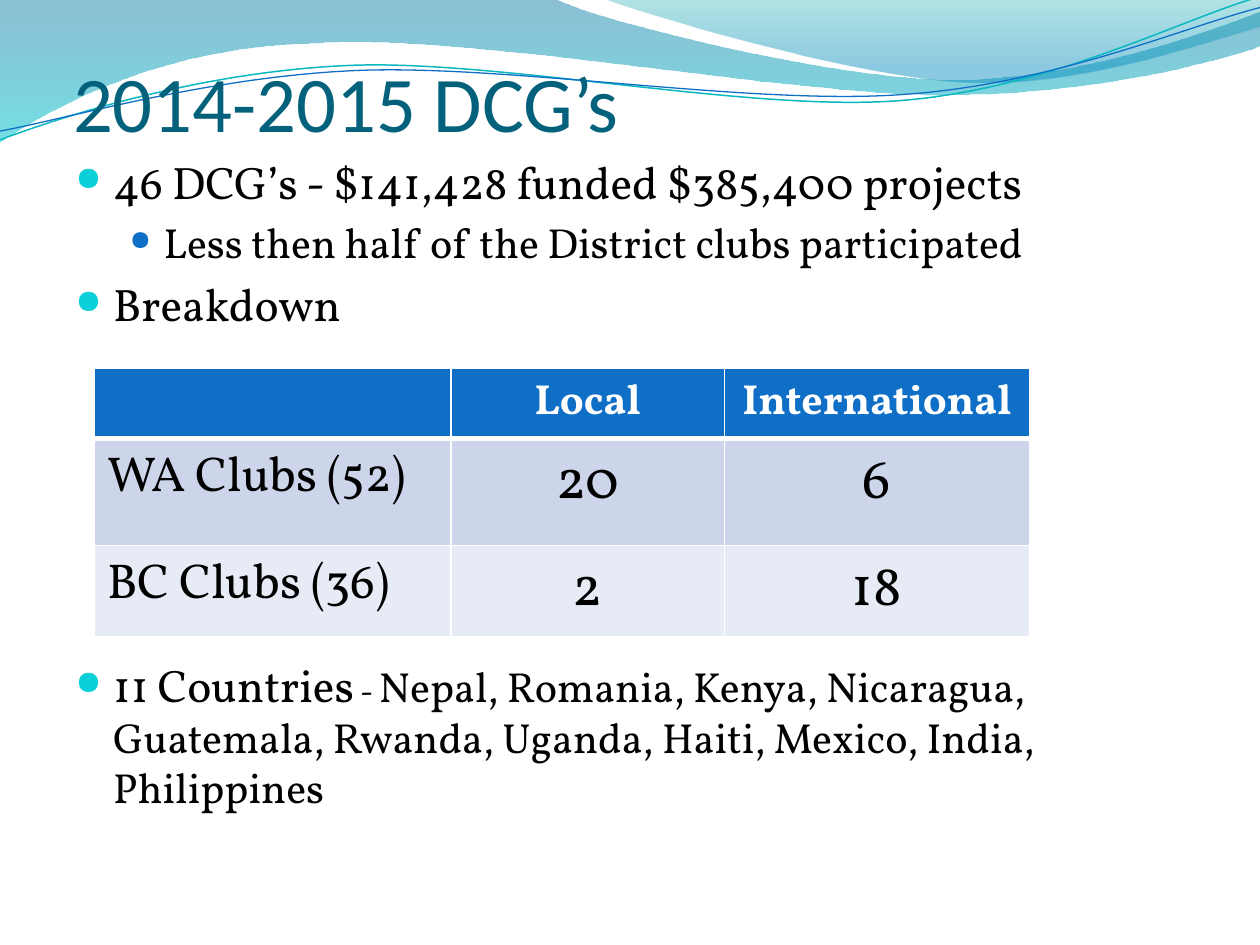
from lxml.etree import SubElement
from pptx import Presentation
from pptx.dml.color import RGBColor
from pptx.enum.text import MSO_ANCHOR, PP_ALIGN
from pptx.oxml.ns import qn
from pptx.util import Inches, Pt

NAVY = RGBColor(0x04, 0x61, 0x7B)
BLUE = RGBColor(0x0F, 0x6F, 0xC6)
CYAN = RGBColor(0x0B, 0xD0, 0xD9)
TEAL = RGBColor(0x0A, 0xB8, 0xBF)
BLACK = RGBColor(0, 0, 0)
WHITE = RGBColor(255, 255, 255)
BANDS = [RGBColor(0xCC, 0xD5, 0xEA), RGBColor(0xE7, 0xEB, 0xF5)]
TITLE_FONT, BODY_FONT = "Calibri", "Vollkorn"
UNITS = 1000  # outline units per inch

TITLE = "2014-2015 DCG’s"

# Bullet styles by level: left margin, hanging indent, colour, size %
LEVELS = [(0.3, -0.3, CYAN, 73), (0.7, -0.27, BLUE, 65)]
# Level, space before (pt), runs; the last paragraph clears the table
BODY = [
    (0, 5.2, [("46 DCG’s - $141,428 funded $385,400 projects", 26)]),
    (1, 4.8, [("Less then half of the District clubs participated", 24)]),
    (0, 5.2, [("Breakdown", 26)]),
    (0, 186.5, [("11 Countries", 26), (" - ", 18),
                ("Nepal, Romania, Kenya, Nicaragua, Guatemala, Rwanda, Uganda, "
                 "Haiti, Mexico, India, Philippines", 24)]),
]

TABLE = [
    ["", "Local", "International"],
    ["WA Clubs (52)", "20", "6"],
    ["BC Clubs (36)", "2", "18"],
]
COL_WIDTHS = [2.83, 2.17, 2.42]
ROW_HEIGHTS = [0.56, 0.85, 0.72]

# Outlines: a 2-tuple is a straight step, a 6-tuple a Bezier curve
# Gradient stops: position, colour, opacity %
BANNERS = [
    ([(0, 0), (4.4, -0.01), (4.76, 0.17, 6.64, 0.63, 7.58, 0.63),
      (8.53, 0.63, 9.58, 0.26, 10, 0.09), (10.01, 0.36),
      (9.83, 0.44, 8.7, 0.76, 7.46, 0.75), (6.22, 0.75, 3.82, 0.28, 2.57, 0.34),
      (1.29, 0.36, 0.46, 0.83, -0.01, 1.13)],
     [(0, RGBColor(0x00, 0x74, 0xA1), 45), (1, RGBColor(0x00, 0xC6, 0xCF), 55)]),
    ([(4.79, -0.01), (5.09, 0.11, 6.82, 0.62, 7.69, 0.65),
      (8.56, 0.69, 9.61, 0.32, 10, 0.21), (10, 0)],
     [(0, RGBColor(0x00, 0xA1, 0xA9), 30), (0.8, RGBColor(0x00, 0x8B, 0xBF), 45)]),
]
WAVES = [
    ([(0, 1.11), (0.48, 0.93, 1.58, 0.57, 2.77, 0.52),
      (3.95, 0.47, 5.93, 0.89, 7.13, 0.8),
      (8.33, 0.71, 9.38, 0.15, 9.98, -0.02)], TEAL, 0.85),
    ([(0, 1.04), (0.47, 0.96, 1.64, 0.61, 2.83, 0.56),
      (4.03, 0.51, 5.97, 0.84, 7.17, 0.75),
      (8.36, 0.67, 9.41, 0.21, 10, 0.06)], BLUE, 0.75),
]


def add_outline(s, outline, close):
    ends = [(round(step[-2] * UNITS), round(step[-1] * UNITS)) for step in outline]
    left, top = (min(values) for values in zip(*ends))
    builder = s.shapes.build_freeform(*ends[0], scale=Inches(1) / UNITS)
    builder.add_line_segments(ends[1:], close=close)
    sp = builder.convert_to_shape()
    sp.shadow.inherit = False
    # Bend the straight segments that have control points
    segments = list(sp._element.spPr.iter(qn("a:lnTo")))
    for segment, step in zip(segments, outline[1:]):
        if len(step) == 6:
            curve = segment.makeelement(qn("a:cubicBezTo"), {})
            for x, y in zip(step[::2], step[1::2]):
                SubElement(curve, qn("a:pt"), x=str(round(x * UNITS) - left),
                           y=str(round(y * UNITS) - top))
            segment.getparent().replace(segment, curve)
    return sp


def add_banner(s, outline, stops):
    sp = add_outline(s, outline, True)
    sp.line.fill.background()
    sp.fill.gradient()
    sp.fill.gradient_angle = 270
    for stop, (position, color, opacity) in zip(sp.fill.gradient_stops, stops):
        stop.position = position
        stop.color.rgb = color
    for clr, stop in zip(sp._element.spPr.iter(qn("a:srgbClr")), stops):
        SubElement(clr, qn("a:alpha"), val=str(stop[2] * 1000))


def add_wave(s, outline, color, width):
    sp = add_outline(s, outline, False)
    sp.fill.background()
    sp.line.color.rgb = color
    sp.line.width = Pt(width)


def add_run(p, text, size, color=BLACK, font=BODY_FONT, bold=False):
    r = p.add_run()
    r.text = text
    r.font.size, r.font.name, r.font.bold = Pt(size), font, bold
    r.font.color.rgb = color


def add_text_frame(s, x, y, w, h):
    tf = s.shapes.add_textbox(Inches(x), Inches(y), Inches(w), Inches(h)).text_frame
    tf.word_wrap = True
    return tf


def set_bullet(p, level):
    margin, indent, color, size = LEVELS[level]
    p.level = level
    pPr = p._p.get_or_add_pPr()
    pPr.set("marL", str(Inches(margin)))
    pPr.set("indent", str(Inches(indent)))
    SubElement(SubElement(pPr, qn("a:buClr")), qn("a:srgbClr"), val=str(color))
    SubElement(pPr, qn("a:buSzPct"), val=str(size * 1000))
    SubElement(pPr, qn("a:buChar"), char="●")


def set_borders(cell, bottom):
    tcPr = cell._tc.get_or_add_tcPr()
    for i, (side, width) in enumerate([("L", 1), ("R", 1), ("T", 1), ("B", bottom)]):
        ln = tcPr.makeelement(qn("a:ln" + side), {"w": str(Pt(width))})
        SubElement(SubElement(ln, qn("a:solidFill")), qn("a:srgbClr"), val=str(WHITE))
        tcPr.insert(i, ln)


def add_clubs_table(s):
    table = s.shapes.add_table(len(TABLE), len(COL_WIDTHS), Inches(0.75), Inches(2.92),
                               Inches(sum(COL_WIDTHS)), Inches(sum(ROW_HEIGHTS))).table
    for col, width in zip(table.columns, COL_WIDTHS):
        col.width = Inches(width)
    for i, (row, height) in enumerate(zip(TABLE, ROW_HEIGHTS)):
        table.rows[i].height = Inches(height)
        header = i == 0
        for j, text in enumerate(row):
            cell = table.cell(i, j)
            cell.fill.solid()
            cell.fill.fore_color.rgb = BLUE if header else BANDS[i - 1]
            set_borders(cell, 3 if header else 1)
            if not text:
                continue
            p = cell.text_frame.paragraphs[0]
            p.alignment = PP_ALIGN.CENTER if j else PP_ALIGN.LEFT
            size = 24 if header else 32 if j else 28
            add_run(p, text, size, WHITE if header else BLACK, bold=header)


def main():
    prs = Presentation()
    prs.slide_width, prs.slide_height = Inches(10), Inches(7.5)
    s = prs.slides.add_slide(prs.slide_layouts[6])

    # Wave decoration
    for banner in BANNERS:
        add_banner(s, *banner)
    for wave in WAVES:
        add_wave(s, *wave)

    # Title
    tf = add_text_frame(s, 0.58, 0.33, 9, 0.85)
    tf.vertical_anchor = MSO_ANCHOR.BOTTOM
    tf.margin_left = tf.margin_right = tf.margin_bottom = 0
    add_run(tf.paragraphs[0], TITLE, 45, NAVY, TITLE_FONT)

    # Bulleted body
    tf = add_text_frame(s, 0.5, 1.17, 9, 5.75)
    for i, (level, space, runs) in enumerate(BODY):
        p = tf.add_paragraph() if i else tf.paragraphs[0]
        p.space_before = Pt(space)
        set_bullet(p, level)
        for text, size in runs:
            add_run(p, text, size)

    add_clubs_table(s)
    prs.save("out.pptx")


if __name__ == "__main__":
    main()
